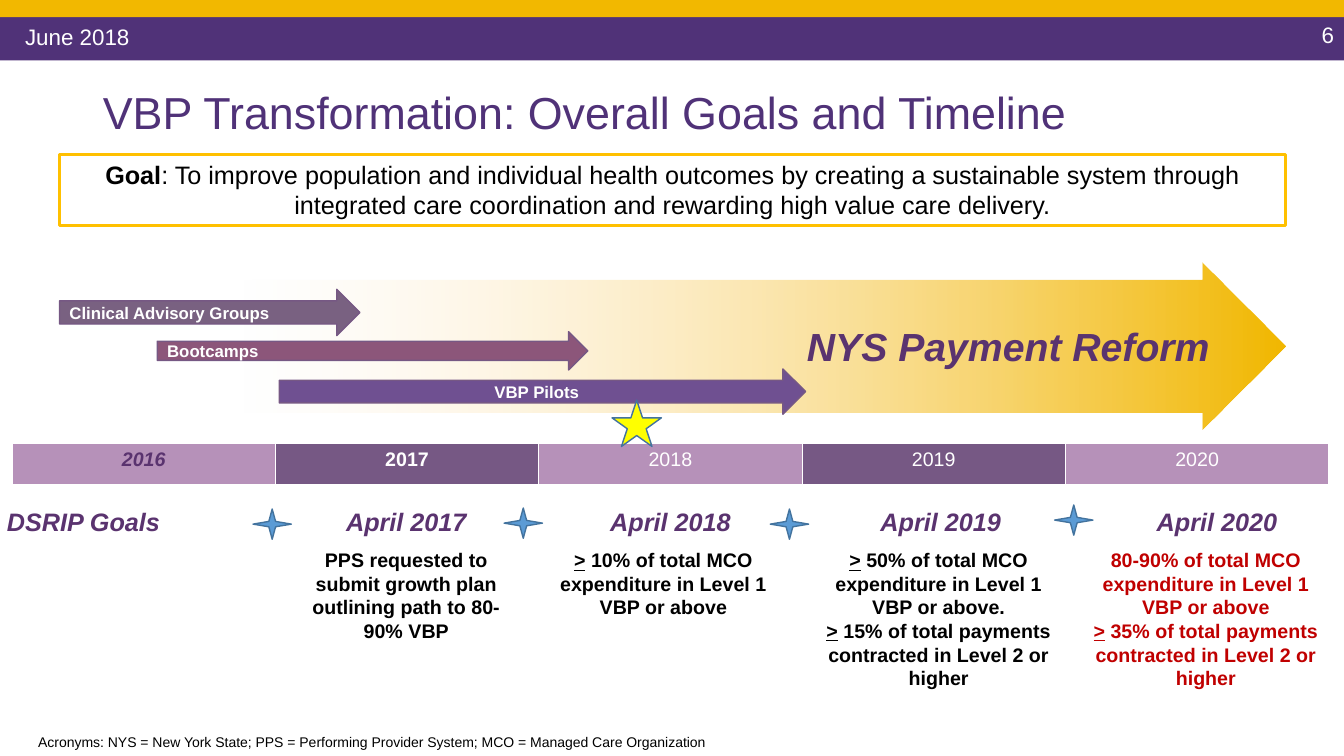
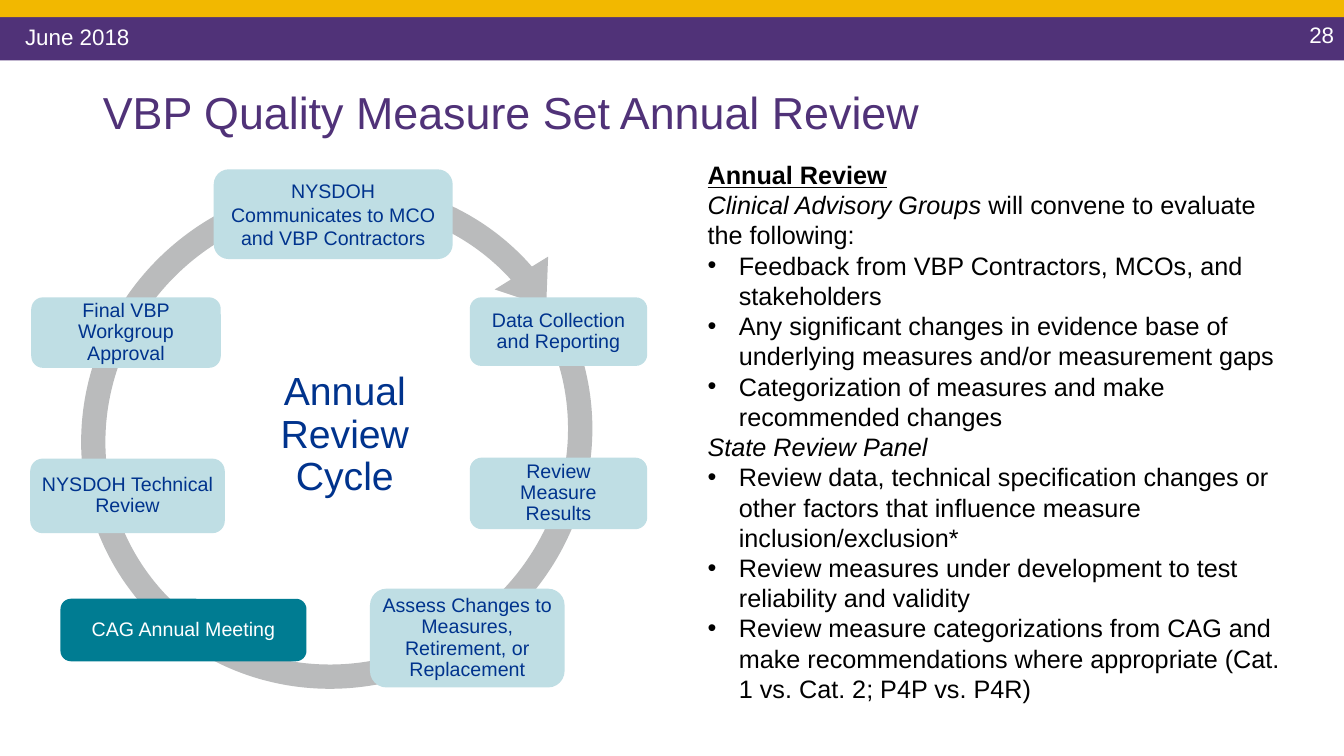
from dataclasses import dataclass

from lxml.etree import SubElement
from pptx import Presentation
from pptx.dml.color import RGBColor as Rgb
from pptx.enum.shapes import MSO_SHAPE as Kind, PP_PLACEHOLDER as Holder
from pptx.enum.text import MSO_ANCHOR as Anchor, MSO_AUTO_SIZE as AutoSize, PP_ALIGN as Align
from pptx.oxml.ns import qn
from pptx.util import Inches, Pt


@dataclass(frozen=True)
class Theme:
    font: str = "Arial"
    purple: str = "503278"
    gold: str = "F2B800"
    plum: str = "5A336F"
    mauve: str = "765884"
    lilac: str = "B691B9"
    frame: str = "FFC000"
    star_blue: str = "5B9BD5"
    star_edge: str = "43739E"
    yellow: str = "FFFF00"
    red: str = "C00000"
    ring: str = "BABBBC"
    teal: str = "007C92"
    pale: str = "BFDEE4"
    navy: str = "00338D"
    cream: str = "FFE4C0"
    white: str = "FFFFFF"
    black: str = "000000"
    title: int = 32
    display: int = 28
    body: int = 18
    band: int = 16
    label: int = 14
    small: int = 12
    note: int = 10


theme = Theme()


def draw(page, kind, at, fill=None, line=None, width=1):
    place = [Inches(value) for value in at]
    if kind is None:
        return page.shapes.add_textbox(*place)
    shape = page.shapes.add_shape(kind, *place)
    shape.shadow.inherit = False
    if fill:
        shape.fill.solid()
        shape.fill.fore_color.rgb = Rgb.from_string(fill)
    else:
        shape.fill.background()
    if line:
        shape.line.color.rgb = Rgb.from_string(line)
        shape.line.width = Pt(width)
    else:
        shape.line.fill.background()
    return shape


def write(frame, paragraphs, size, color, align=Align.LEFT, anchor=Anchor.TOP, spacing=None):
    frame.word_wrap = True
    frame.vertical_anchor = anchor
    for index, spans in enumerate(paragraphs):
        para = frame.add_paragraph() if index else frame.paragraphs[0]
        para.alignment = align
        para.line_spacing = spacing
        for text, style in spans:
            span = para.add_run()
            span.text = text
            span.font.name = theme.font
            span.font.size = Pt(size)
            span.font.color.rgb = Rgb.from_string(color)
            span.font.bold = "b" in style
            span.font.italic = "i" in style
            span.font.underline = "u" in style


deck = Presentation()
deck.slide_width, deck.slide_height = Inches(13.33), Inches(7.5)
layout = deck.slide_layouts[5]
for holder in list(layout.placeholders):
    if holder.placeholder_format.type != Holder.TITLE:
        layout.shapes.element.remove(holder.element)

headings = [
    ("VBP Transformation: Overall Goals and Timeline", "6"),
    ("VBP Quality Measure Set Annual Review", "28"),
]
timeline, review = [deck.slides.add_slide(layout) for heading in headings]

purple_band = draw(timeline, Kind.RECTANGLE, (0, 0.17, 13.33, 0.43), theme.purple)
gold_band = draw(timeline, Kind.RECTANGLE, (0, 0, 13.33, 0.17), theme.gold)
date_box = draw(timeline, None, (0.15, 0.18, 2.32, 0.37))
write(date_box.text_frame, [[("June 2018", "")]], theme.band, theme.white)
for shared in (purple_band, gold_band, date_box):
    layout.shapes.element.append(shared.element)

for page, (heading, number) in zip((timeline, review), headings):
    title = page.shapes.title
    title.left, title.top, title.width, title.height = [Inches(v) for v in (0.92, 0.85, 11.5, 1.15)]
    title.text_frame.auto_size = AutoSize.NONE
    write(title.text_frame, [[(heading, "")]], theme.title, theme.purple, spacing=0.9)
    number_box = draw(page, None, (9.92, 0.16, 3.41, 0.37))
    write(number_box.text_frame, [[(number, "")]], theme.band, theme.white, Align.RIGHT, Anchor.MIDDLE)

acronyms = "Acronyms: NYS = New York State; PPS = Performing Provider System; MCO = Managed Care Organization"
note_box = draw(timeline, None, (0.28, 7.23, 10.82, 0.27))
write(note_box.text_frame, [[(acronyms, "")]], theme.note, theme.black)

years = [("2016", "bi"), ("2017", "b"), ("2018", ""), ("2019", ""), ("2020", "")]
table = timeline.shapes.add_table(
    1, len(years), Inches(0.12), Inches(4.4), Inches(13.06), Inches(0.41)
).table
for index, year in enumerate(years):
    cell = table.cell(0, index)
    cell.fill.solid()
    cell.fill.fore_color.rgb = Rgb.from_string(theme.mauve if index % 2 else theme.lilac)
    write(cell.text_frame, [[year]], theme.label, theme.white if index else theme.plum, Align.CENTER)

milestones = [
    ("DSRIP Goals", -0.03, 2.32, Align.LEFT),
    ("April 2017", 2.87, 2.32, Align.CENTER),
    ("April 2018", 5.31, 2.68, Align.CENTER),
    ("April 2019", 7.99, 2.68, Align.CENTER),
    ("April 2020", 10.73, 2.68, Align.CENTER),
]
for text, left, width, align in milestones:
    box = draw(timeline, None, (left, 4.97, width, 0.4))
    write(box.text_frame, [[(text, "bi")]], theme.body, theme.plum, align)

for left, top in [(2.51, 5.05), (5, 5.04), (7.64, 5.05), (10.46, 5.01)]:
    draw(timeline, Kind.STAR_4_POINT, (left, top, 0.38, 0.3), theme.star_blue, theme.star_edge)

at_least = (">", "bu")
targets = [
    (2.81, 1.04, theme.black, [[("PPS requested to submit growth plan outlining path to 80-90% VBP", "b")]]),
    (5.36, 0.81, theme.black, [[at_least, (" 10% of total MCO expenditure in Level 1 VBP or above", "b")]]),
    (8.09, 1.75, theme.black, [
        [at_least, (" 50% of total MCO expenditure in Level 1 VBP or above.", "b")],
        [at_least, (" 15% of total payments contracted in Level 2 or higher", "b")],
    ]),
    (10.74, 1.51, theme.red, [
        [("80-90% of total MCO expenditure in Level 1 VBP or above", "b")],
        [at_least, (" 35% of total payments contracted in Level 2 or higher", "b")],
    ]),
]
for left, height, color, paragraphs in targets:
    box = draw(timeline, None, (left, 5.39, 2.44, height))
    write(box.text_frame, paragraphs, theme.label, color, Align.CENTER)

reform = draw(timeline, Kind.RIGHT_ARROW, (2.37, 2.6, 10.38, 1.66))
reform.adjustments[0] = 0.79
reform.fill.gradient()
reform.fill.gradient_angle = 180
for stop, color in zip(reform.fill.gradient_stops, (theme.gold, theme.cream)):
    stop.color.rgb = Rgb.from_string(color)
faded = reform.element.findall(".//" + qn("a:srgbClr"))[1]
SubElement(faded, qn("a:alpha"), val="0")
write(reform.text_frame, [[("NYS Payment Reform", "bi")]], theme.display, theme.plum,
      Align.RIGHT, Anchor.MIDDLE)

efforts = [
    ("Bootcamps", (1.56, 3.29, 4.27, 0.38), "8C567A", Align.LEFT),
    ("Clinical Advisory Groups", (0.59, 2.87, 2.98, 0.46), "796181", Align.LEFT),
    ("VBP Pilots", (2.77, 3.66, 5.22, 0.45), "6F5091", Align.CENTER),
]
for text, at, fill, align in efforts:
    arrow = draw(timeline, Kind.RIGHT_ARROW, at, fill, theme.mauve)
    write(arrow.text_frame, [[(text, "b")]], theme.small, theme.white, align, Anchor.MIDDLE)

goal = draw(timeline, Kind.RECTANGLE, (0.59, 1.53, 12.16, 0.71), None, theme.frame, 2.25)
write(goal.text_frame, [[
    ("Goal", "b"),
    (": To improve population and individual health outcomes by creating a sustainable system "
     "through integrated care coordination and rewarding high value care delivery.", ""),
]], theme.body, theme.black, Align.CENTER)
draw(timeline, Kind.STAR_5_POINT, (6.07, 3.97, 0.49, 0.46), theme.yellow, theme.star_edge)

cycle = draw(review, Kind.CIRCULAR_ARROW, (0.66, 1.57, 5.36, 5.5), theme.ring)
cycle.rotation = 53.7
for index, value in enumerate((0.045, 5.83, 158.99, 169.5, 0.058)):
    cycle.adjustments[index] = value

steps = [
    ("CAG Annual Meeting", (0.6, 5.94, 2.44, 0.62), theme.teal, theme.white, 0.06, 0.9),
    ("Data Collection and Reporting", (4.66, 2.95, 1.76, 0.68), theme.pale, theme.navy, 0.06, 0.9),
    ("Assess Changes to Measures, Retirement, or Replacement", (3.67, 5.84, 1.93, 0.98),
     theme.pale, theme.navy, 0.06, 0.9),
    ("Review Measure Results", (4.66, 4.54, 1.76, 0.71), theme.pale, theme.navy, 0.2, 0.9),
    ("NYSDOH Technical Review", (0.3, 4.55, 1.93, 0.74), theme.pale, theme.navy, 0.06, 0.9),
    ("Final VBP Workgroup Approval", (0.31, 2.95, 1.88, 0.7), theme.pale, theme.navy, 0.06, 0.9),
    ("NYSDOH Communicates to MCO and VBP Contractors", (2.12, 1.68, 2.37, 0.89),
     theme.pale, theme.navy, 0.1, 1.0),
]
for text, at, fill, color, inset, spacing in steps:
    step = draw(review, Kind.ROUNDED_RECTANGLE, at, fill)
    frame = step.text_frame
    frame.margin_left = frame.margin_right = Inches(inset)
    frame.margin_top = frame.margin_bottom = Inches(0.05)
    write(frame, [[(text, "")]], theme.label, color, Align.CENTER, Anchor.MIDDLE, spacing)

center = draw(review, None, (2.35, 3.96, 2.14, 0.72))
write(center.text_frame, [[("Annual Review Cycle", "")]], theme.display, theme.navy,
      Align.CENTER, Anchor.MIDDLE, 0.9)

duties = [
    (False, [("Annual Review", "bu")]),
    (False, [("Clinical Advisory Groups ", "i"), ("will convene to evaluate the following:", "")]),
    (True, [("Feedback from VBP Contractors, MCOs, and stakeholders", "")]),
    (True, [("Any significant changes in evidence base of underlying measures and/or measurement gaps", "")]),
    (True, [("Categorization of measures and make recommended changes", "")]),
    (False, [("State Review Panel", "i")]),
    (True, [("Review data, technical specification changes or other factors that influence measure "
             "inclusion/exclusion*", "")]),
    (True, [("Review measures under development to test reliability and validity", "")]),
    (True, [("Review measure categorizations from CAG and make recommendations where appropriate "
             "(Cat. 1 vs. Cat. 2; P4P vs. P4R)", "")]),
]
duties_box = draw(review, None, (6.92, 1.53, 6.01, 5.59))
write(duties_box.text_frame, [spans for bulleted, spans in duties], theme.body, theme.black)
for (bulleted, spans), para in zip(duties, duties_box.text_frame.paragraphs):
    if bulleted:
        props = para._p.get_or_add_pPr()
        props.set("marL", str(Inches(0.31)))
        props.set("indent", str(-Inches(0.31)))
        SubElement(props, qn("a:buFont"), typeface=theme.font)
        SubElement(props, qn("a:buChar"), char="•")

deck.save("out.pptx")
